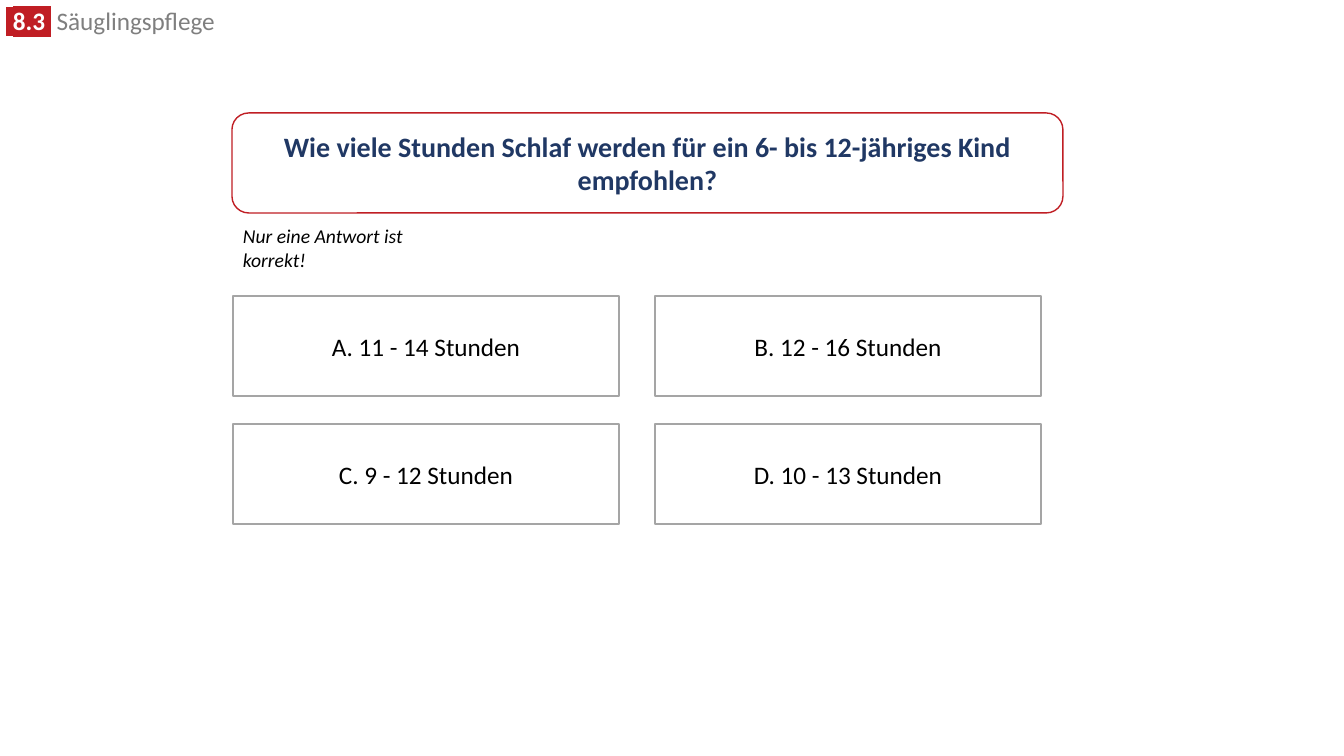
from lxml.etree import SubElement
from pptx import Presentation
from pptx.dml.color import RGBColor
from pptx.enum.shapes import MSO_SHAPE
from pptx.enum.text import MSO_ANCHOR, PP_ALIGN
from pptx.oxml.ns import qn
from pptx.util import Emu, Pt

RED = RGBColor(0xC0, 0x1E, 0x24)
NAVY = RGBColor(0x20, 0x38, 0x64)
GRAY = RGBColor(0x7F, 0x7F, 0x7F)
BORDER = RGBColor(0xA5, 0xA5, 0xA5)
BLACK = RGBColor(0, 0, 0)
WHITE = RGBColor(0xFF, 0xFF, 0xFF)

QUESTION = "Wie viele Stunden Schlaf werden für ein 6- bis 12-jähriges Kind empfohlen?"
ANSWERS = ["A. 11 - 14 Stunden", "B. 12 - 16 Stunden",
           "C. 9 - 12 Stunden", "D. 10 - 13 Stunden"]


def px(n):
    """Turn pixels into EMU."""
    return Emu(round(n * 914400 / 100.8))


def style_run(r, size, color, bold=False, italic=False, font="Calibri"):
    """Set the font of a run."""
    r.font.name = font
    r.font.size = Pt(size)
    r.font.bold = bold
    r.font.italic = italic
    r.font.color.rgb = color


def highlight(r, color):
    """Put a highlight colour behind a run."""
    fill = r.font.fill._xPr.find(qn("a:solidFill"))
    mark = SubElement(fill.getparent(), qn("a:highlight"))
    SubElement(mark, qn("a:srgbClr")).set("val", str(color))
    fill.addnext(mark)


def add_text(s, x, y, w, h):
    """Add a wrapping text box and return its text frame."""
    tf = s.shapes.add_textbox(px(x), px(y), px(w), px(h)).text_frame
    tf.word_wrap = True
    return tf


def add_topic(s, number, title):
    """Add the chapter number and title at the top left."""
    p = add_text(s, -4, 6, 278, 34).paragraphs[0]
    p.line_spacing = 0.8
    for text, font in ((" ", "Arial"), (f"{number} ", "Calibri")):
        r = p.add_run()
        r.text = text
        style_run(r, 18, WHITE, bold=True, font=font)
        highlight(r, RED)
    r = p.add_run()
    r.text = f" {title}"
    style_run(r, 18, GRAY)


def add_hint(s, text):
    """Add the italic hint under the question."""
    tf = add_text(s, 233, 219, 238, 57)
    tf.text = text
    style_run(tf.paragraphs[0].runs[0], 14, BLACK, italic=True)


def add_box(s, kind, x, y, w, h, text, line, width, size, color, bold=False):
    """Add a white outlined box with centred text."""
    sp = s.shapes.add_shape(kind, px(x), px(y), px(w), px(h))
    sp.shadow.inherit = False
    sp.fill.solid()
    sp.fill.fore_color.rgb = WHITE
    sp.line.color.rgb = line
    sp.line.width = Pt(width)
    tf = sp.text_frame
    tf.word_wrap = True
    tf.vertical_anchor = MSO_ANCHOR.MIDDLE
    tf.text = text
    p = tf.paragraphs[0]
    p.alignment = PP_ALIGN.CENTER
    style_run(p.runs[0], size, color, bold)


def main():
    """Build the quiz slide."""
    prs = Presentation()
    prs.slide_width, prs.slide_height = px(1344), px(756)
    s = prs.slides.add_slide(prs.slide_layouts[6])
    add_topic(s, "8.3", "Säuglingspflege")
    add_box(s, MSO_SHAPE.ROUNDED_RECTANGLE, 232, 113, 831, 100,
            QUESTION, RED, 1, 20, NAVY, bold=True)
    add_hint(s, "Nur eine Antwort ist korrekt!")
    for i, answer in enumerate(ANSWERS):
        row, col = divmod(i, 2)
        add_box(s, MSO_SHAPE.RECTANGLE, 233 + col * 422, 296 + row * 128, 386, 100,
                answer, BORDER, 2, 18, BLACK)
    prs.save("out.pptx")


if __name__ == "__main__":
    main()
